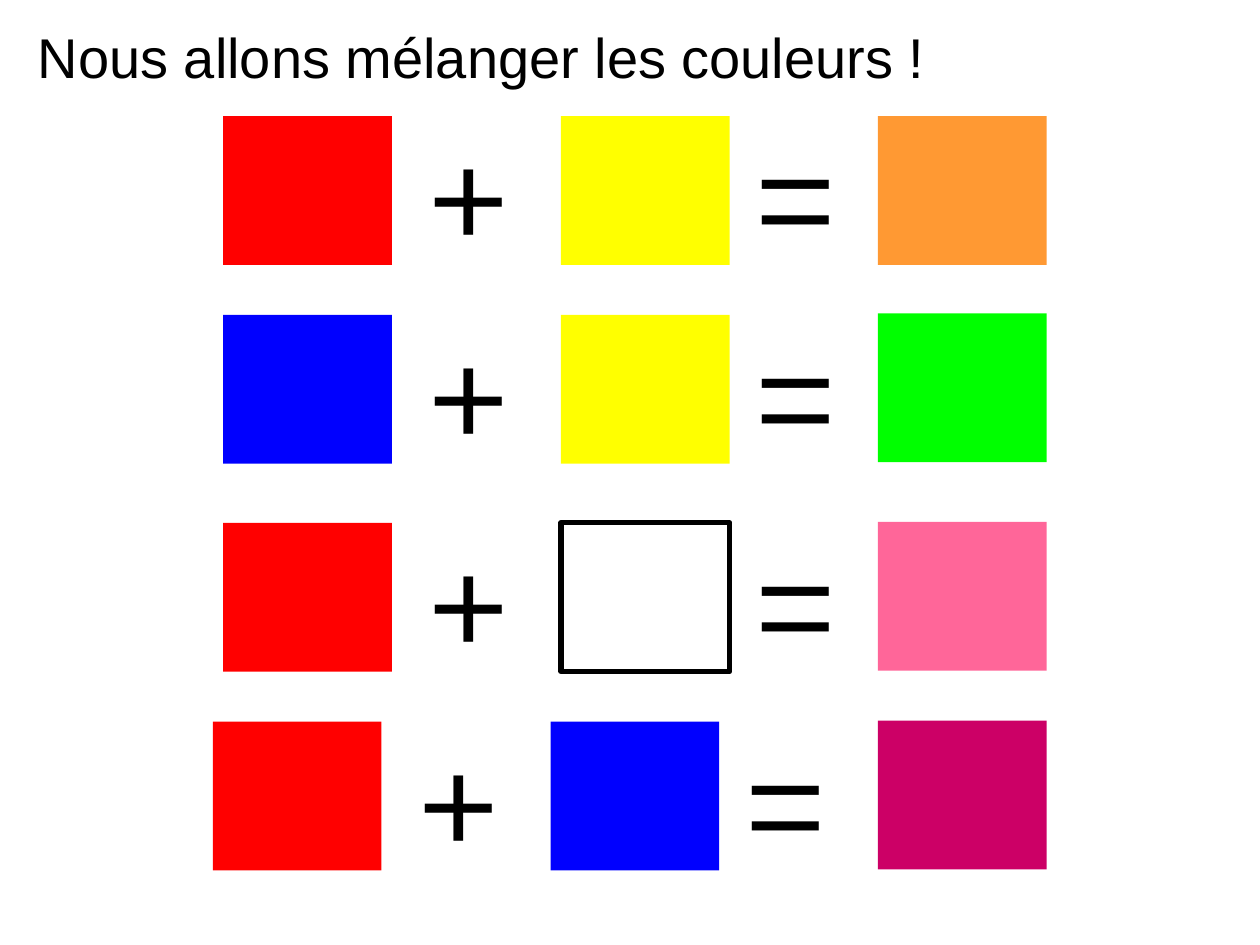
from dataclasses import dataclass

import pptx
import pptx.dml.color
import pptx.enum.shapes
import pptx.enum.text
import pptx.util

Cm = pptx.util.Cm
Pt = pptx.util.Pt


@dataclass(frozen=True)
class Theme:
    red: str = "FF0000"
    yellow: str = "FFFF00"
    blue: str = "0000FF"
    white: str = "FFFFFF"
    orange: str = "FF9933"
    green: str = "00FF00"
    pink: str = "FF6699"
    purple: str = "CC0066"
    ink: str = "000000"
    title_font: str = "Arial"
    sign_font: str = "Montserrat"
    title_size: int = 32
    sign_size: int = 88
    outline: int = 3


THEME = Theme()
SWATCH_WIDTH, SWATCH_HEIGHT = 3.4, 3.0
SIGN_WIDTH, SIGN_HEIGHT = 2.59, 3.99
PLUS_OFFSET, SECOND_OFFSET, EQUALS_OFFSET = 3.81, 6.81, 10.41
SIGN_RISE = 0.4
RESULT_LEFT = 17.7


def rgb(value):
    return pptx.dml.color.RGBColor.from_string(value)


def add_label(slide, left, top, width, height, words, font_name, size):
    label = slide.shapes.add_textbox(Cm(left), Cm(top), Cm(width), Cm(height))
    frame = label.text_frame
    frame.word_wrap = True
    frame.auto_size = pptx.enum.text.MSO_AUTO_SIZE.SHAPE_TO_FIT_TEXT
    line = frame.paragraphs[0]
    line.text = words
    line.font.name = font_name
    line.font.size = Pt(size)
    line.font.color.rgb = rgb(THEME.ink)


def add_swatch(slide, left, top, colour):
    swatch = slide.shapes.add_shape(
        pptx.enum.shapes.MSO_SHAPE.RECTANGLE,
        Cm(left), Cm(top), Cm(SWATCH_WIDTH), Cm(SWATCH_HEIGHT))
    swatch.shadow.inherit = False
    swatch.fill.solid()
    swatch.fill.fore_color.rgb = rgb(colour)
    if colour == THEME.white:
        swatch.line.color.rgb = rgb(THEME.ink)
        swatch.line.width = Pt(THEME.outline)
    else:
        swatch.line.fill.background()


def add_title(slide, left, top, width, height):
    add_label(slide, left, top, width, height,
              "Nous allons mélanger les couleurs !", THEME.title_font, THEME.title_size)


def add_mixture(slide, left, top, result_top, first, second, result):
    add_swatch(slide, left, top, first)
    add_swatch(slide, left + SECOND_OFFSET, top, second)
    for sign, offset in (("=", EQUALS_OFFSET), ("+", PLUS_OFFSET)):
        add_label(slide, left + offset, top - SIGN_RISE, SIGN_WIDTH, SIGN_HEIGHT,
                  sign, THEME.sign_font, THEME.sign_size)
    add_swatch(slide, RESULT_LEFT, result_top, result)


def main():
    deck = pptx.Presentation()
    deck.slide_width, deck.slide_height = Cm(25.4), Cm(19.05)
    slide = deck.slides.add_slide(deck.slide_layouts[6])

    add_title(slide, 0.51, 0.33, 24, 1.6)
    mixtures = (
        (4.5, 2.34, 2.34, THEME.red, THEME.yellow, THEME.orange),
        (4.5, 6.35, 6.32, THEME.blue, THEME.yellow, THEME.green),
        (4.5, 10.54, 10.52, THEME.red, THEME.white, THEME.pink),
        (4.29, 14.55, 14.53, THEME.red, THEME.blue, THEME.purple),
    )
    for mixture in mixtures:
        add_mixture(slide, *mixture)

    deck.save("out.pptx")


if __name__ == "__main__":
    main()
